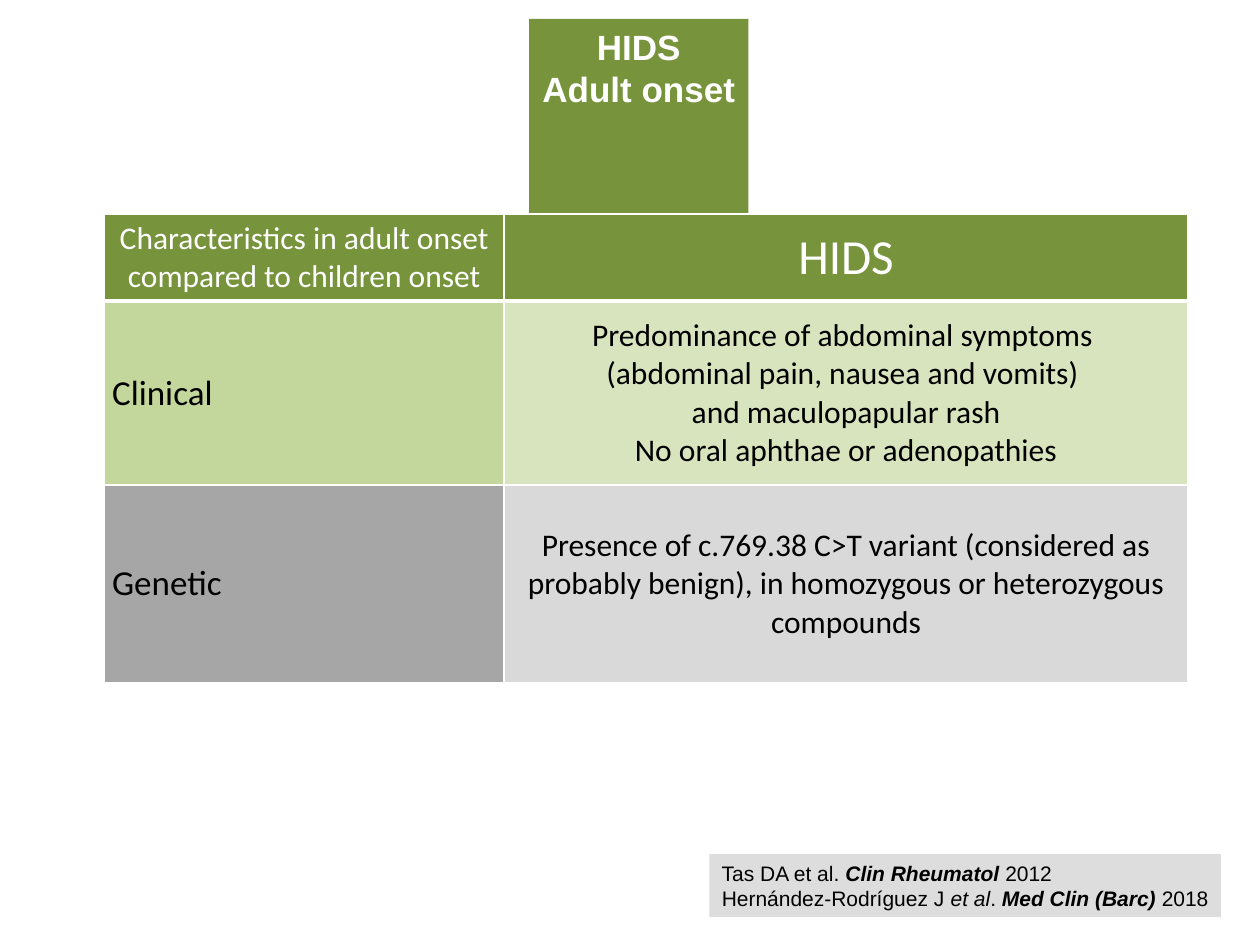
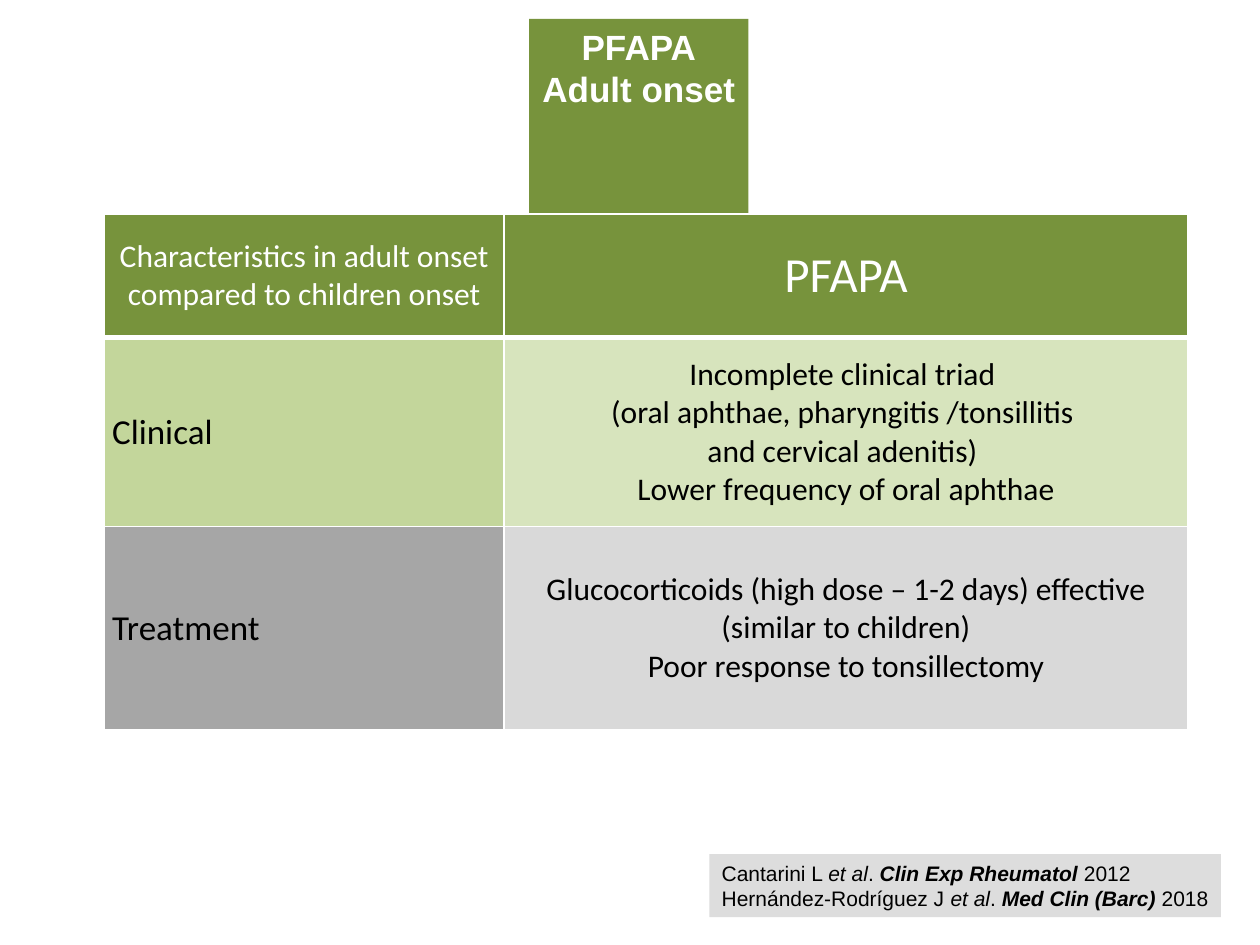
from lxml import etree
from pptx import Presentation
from pptx.dml.color import RGBColor
from pptx.enum.shapes import MSO_SHAPE
from pptx.enum.text import MSO_ANCHOR, MSO_AUTO_SIZE, PP_ALIGN
from pptx.oxml.ns import qn
from pptx.util import Inches, Pt

LEFT, CENTER, RIGHT = PP_ALIGN.LEFT, PP_ALIGN.CENTER, PP_ALIGN.RIGHT
MIDDLE, TOP = MSO_ANCHOR.MIDDLE, MSO_ANCHOR.TOP
RECTANGLE = MSO_SHAPE.RECTANGLE
FIT_SHAPE = MSO_AUTO_SIZE.SHAPE_TO_FIT_TEXT

GREEN = RGBColor(0x77, 0x93, 0x3C)
MID_GREEN = RGBColor(0xC3, 0xD6, 0x9B)
PALE_GREEN = RGBColor(0xD7, 0xE4, 0xBD)
MID_GRAY = RGBColor(0xA6, 0xA6, 0xA6)
PALE_GRAY = RGBColor(0xD9, 0xD9, 0xD9)
SOURCE_GRAY = RGBColor(0xDD, 0xDD, 0xDD)
WHITE = RGBColor(0xFF, 0xFF, 0xFF)
BLACK = RGBColor(0, 0, 0)

# Each line is a list of (text, style) spans: "b" is bold, "i" is italic.
SHARED_SOURCE = [("Hernández-Rodríguez J ", ""), ("et al", "i"), (". ", ""),
                 ("Med Clin (Barc) ", "bi"), ("2018", "")]
HEADING = ["Characteristics in adult onset", "compared to children onset"]

SLIDES = [
    {
        "disease": "HIDS",
        "row_heights": [0.69, 1.46, 1.57],
        "rows": [
            ("Clinical", ["Predominance of abdominal symptoms ",
                          "(abdominal pain, nausea and vomits) ",
                          "and maculopapular rash",
                          "No oral aphthae or adenopathies"]),
            ("Genetic", ["Presence of c.769.38 C>T variant (considered as probably "
                         "benign), in homozygous or heterozygous compounds"]),
        ],
        "sources": [[("Tas DA et al. ", ""), ("Clin Rheumatol ", "bi"), ("2012", "")],
                    SHARED_SOURCE],
        "source_aligns": [LEFT, RIGHT],
    },
    {
        "disease": "PFAPA",
        "row_heights": [0.98, 1.5, 1.61],
        "rows": [
            ("Clinical", ["Incomplete clinical triad ",
                          "(oral aphthae, pharyngitis /tonsillitis ",
                          "and cervical adenitis) ",
                          "Lower frequency of oral aphthae"]),
            ("Treatment", ["Glucocorticoids (high dose – 1-2 days) effective "
                           "(similar to children)",
                           "Poor response to tonsillectomy"]),
        ],
        "sources": [[("Cantarini L ", ""), ("et al", "i"), (". ", ""),
                     ("Clin Exp Rheumatol", "bi"), (" 2012", "")],
                    SHARED_SOURCE],
        "source_aligns": [LEFT, LEFT],
    },
]

TITLE_BOX = (4.2, 0.15, 1.74, 0.77)
SOURCE_BOX = (5.63, 6.78, 4.06, 0.5)
TABLE_LEFT, TABLE_TOP = 0.83, 1.7
COLUMN_WIDTHS = [3.17, 5.43]
ROW_FILLS = [(GREEN, GREEN), (MID_GREEN, PALE_GREEN), (MID_GRAY, PALE_GRAY)]


def write_lines(frame, lines, size, font="Calibri", color=BLACK, bold=False,
                aligns=(CENTER,), hanging=0):
    """Fill a frame with lines, each a string or a list of (text, style) spans."""
    for index, line in enumerate(lines):
        para = frame.paragraphs[0] if index == 0 else frame.add_paragraph()
        para.alignment = aligns[index % len(aligns)]
        if hanging:
            properties = para._p.get_or_add_pPr()
            properties.set("marL", str(Inches(hanging)))
            properties.set("indent", str(-Inches(hanging)))
        for text, style in [(line, "")] if isinstance(line, str) else line:
            span = para.add_run()
            span.text = text
            span.font.name = font
            span.font.size = Pt(size)
            span.font.color.rgb = color
            span.font.bold = bold or "b" in style
            span.font.italic = "i" in style


def add_borders(cell, header_row, below_header):
    """Draw white cell borders, with a thick line under the header row."""
    properties = cell._tc.get_or_add_tcPr()
    thick = {"lnB": header_row, "lnT": below_header}
    for position, side in enumerate(("lnL", "lnR", "lnT", "lnB")):
        line = etree.Element(qn("a:" + side), w=str(Pt(3 if thick.get(side) else 1)))
        fill = etree.SubElement(line, qn("a:solidFill"))
        etree.SubElement(fill, qn("a:srgbClr"), val=str(WHITE))
        properties.insert(position, line)


def fill_box(box, place, color, anchor, wrap):
    box.left, box.top, box.width, box.height = map(Inches, place)
    box.fill.solid()
    box.fill.fore_color.rgb = color
    box.line.fill.background()
    frame = box.text_frame
    frame.vertical_anchor = anchor
    frame.word_wrap = wrap
    frame.auto_size = FIT_SHAPE
    return frame


def add_comparison(page, disease, rows, row_heights):
    content = [(HEADING, [disease])] + [([label], lines) for label, lines in rows]
    table = page.shapes.add_table(
        len(content), len(COLUMN_WIDTHS), Inches(TABLE_LEFT), Inches(TABLE_TOP),
        Inches(sum(COLUMN_WIDTHS)), Inches(sum(row_heights))).table
    table.horz_banding = False
    for column, width in zip(table.columns, COLUMN_WIDTHS):
        column.width = Inches(width)
    for row_index, (texts, height) in enumerate(zip(content, row_heights)):
        table.rows[row_index].height = Inches(height)
        header = row_index == 0
        sizes = (18, 28) if header else (20, 18)
        for column_index, lines in enumerate(texts):
            cell = table.cell(row_index, column_index)
            cell.fill.solid()
            cell.fill.fore_color.rgb = ROW_FILLS[row_index][column_index]
            cell.vertical_anchor = MIDDLE
            cell.margin_left = cell.margin_right = Inches(0.06)
            cell.margin_top = cell.margin_bottom = 0
            add_borders(cell, header, row_index == 1)
            is_label = column_index == 0 and not header
            write_lines(cell.text_frame, lines, sizes[column_index],
                        color=WHITE if header else BLACK,
                        aligns=(LEFT if is_label else CENTER,))


def build_slide(deck, content):
    page = deck.slides.add_slide(deck.slide_layouts[5])
    add_comparison(page, content["disease"], content["rows"], content["row_heights"])

    source_box = page.shapes.add_shape(RECTANGLE, *map(Inches, SOURCE_BOX))
    source_box.shadow.inherit = False
    frame = fill_box(source_box, SOURCE_BOX, SOURCE_GRAY, MIDDLE, True)
    write_lines(frame, content["sources"], 12, font="Arial",
                aligns=content["source_aligns"], hanging=0.38)

    frame = fill_box(page.shapes.title, TITLE_BOX, GREEN, TOP, False)
    write_lines(frame, [content["disease"], "Adult onset"], 20, font="Arial",
                color=WHITE, bold=True)


def main():
    deck = Presentation()
    deck.slide_width, deck.slide_height = Inches(10), Inches(7.5)
    for content in SLIDES:
        build_slide(deck, content)
    deck.save("out.pptx")


if __name__ == "__main__":
    main()
